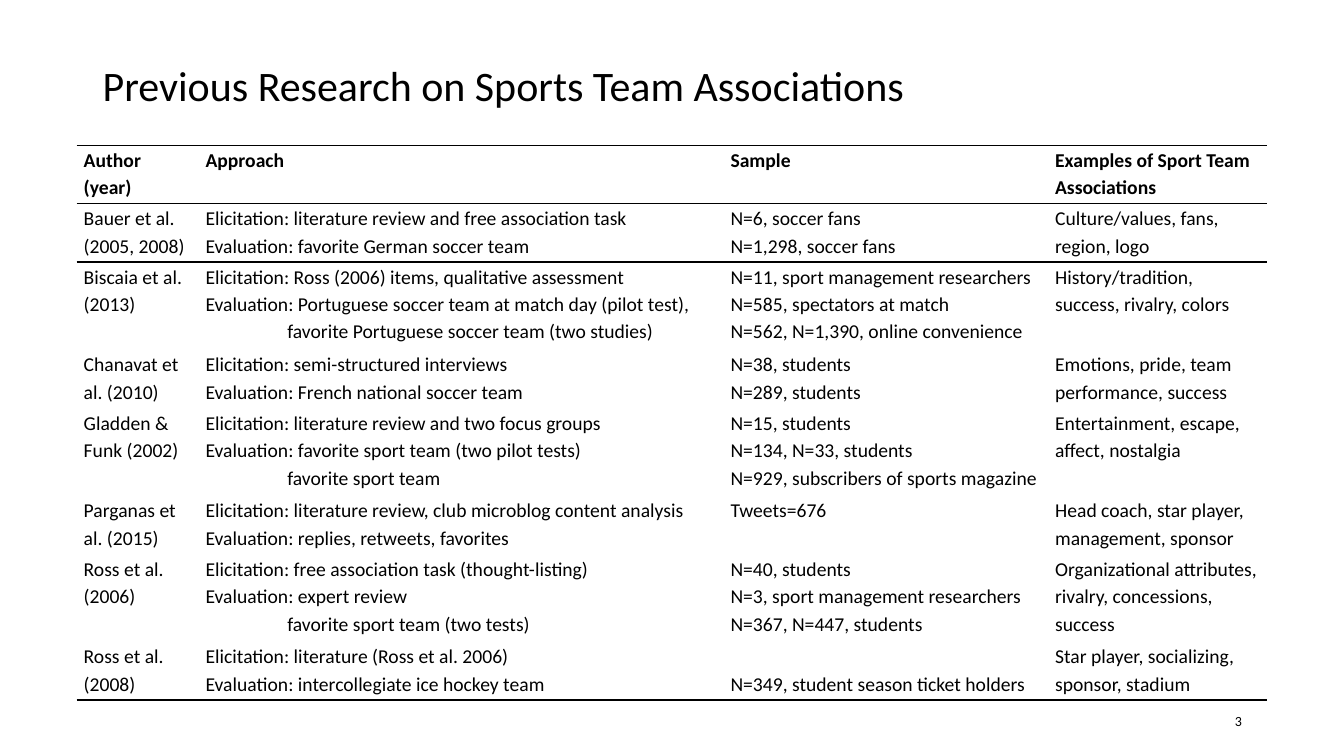
import pptx
import pptx.dml.color
import pptx.enum.text
import pptx.oxml
import pptx.oxml.ns
import pptx.util

Cm = pptx.util.Cm
Pt = pptx.util.Pt
ALIGN = pptx.enum.text.PP_ALIGN
ANCHOR = pptx.enum.text.MSO_ANCHOR

BLACK = pptx.dml.color.RGBColor(0x00, 0x00, 0x00)
PLAIN_TABLE_STYLE = "{2D5ABB26-0587-4C30-8999-92F81FD0307C}"

HEADINGS = [["Author (year)"], ["Approach"], ["Sample"],
            ["Examples of Sport Team Associations"]]
STUDIES = [
    [["Bauer et al. (2005, 2008)"],
     ["Elicitation: literature review and free association task",
      "Evaluation: favorite German soccer team"],
     ["N=6, soccer fans", "N=1,298, soccer fans"],
     ["Culture/values, fans, region, logo"]],
    [["Biscaia et al. (2013)"],
     ["Elicitation: Ross (2006) items, qualitative assessment",
      "Evaluation: Portuguese soccer team at match day (pilot test),",
      "favorite Portuguese soccer team (two studies)"],
     ["N=11, sport management researchers", "N=585, spectators at match",
      "N=562, N=1,390, online convenience"],
     ["History/tradition, success, rivalry, colors"]],
    [["Chanavat et al. (2010)"],
     ["Elicitation: semi-structured interviews",
      "Evaluation: French national soccer team"],
     ["N=38, students", "N=289, students"],
     ["Emotions, pride, team performance, success"]],
    [["Gladden & Funk (2002)"],
     ["Elicitation: literature review and two focus groups",
      "Evaluation: favorite sport team (two pilot tests)",
      "favorite sport team"],
     ["N=15, students", "N=134, N=33, students",
      "N=929, subscribers of sports magazine"],
     ["Entertainment, escape, affect, nostalgia"]],
    [["Parganas et al. (2015)"],
     ["Elicitation: literature review, club microblog content analysis",
      "Evaluation: replies, retweets, favorites"],
     ["Tweets=676"],
     ["Head coach, star player, management, sponsor"]],
    [["Ross et al. (2006)"],
     ["Elicitation: free association task (thought-listing)",
      "Evaluation: expert review",
      "favorite sport team (two tests)"],
     ["N=40, students", "N=3, sport management researchers",
      "N=367, N=447, students"],
     ["Organizational attributes, rivalry, concessions, success"]],
    [["Ross et al. (2008)"],
     ["Elicitation: literature (Ross et al. 2006)",
      "Evaluation: intercollegiate ice hockey team"],
     ["N=349, student season ticket holders"],
     ["Star player, socializing, sponsor, stadium"]],
]
APPROACH, SAMPLE = 1, 2
COLUMN_WIDTHS = [3.07, 13.23, 8.18, 5.51]
ROW_HEIGHTS = {2: 1.47, 3: 2.21}  # by number of text lines


class SlideBuilder:
    """Holds the text style and the current slide."""

    def __init__(self, page, font="Calibri", color=BLACK):
        self.page = page
        self.font = font
        self.color = color

    def add_span(self, para, text, size, bold=False):
        span = para.add_run()
        span.text = text
        span.font.name = self.font
        span.font.size = Pt(size)
        span.font.bold = bold
        span.font.color.rgb = self.color

    def add_text(self, text, left, top, width, height, size,
                 anchor=ANCHOR.MIDDLE, align=ALIGN.LEFT, spacing=1.0):
        box = self.page.shapes.add_textbox(Cm(left), Cm(top), Cm(width), Cm(height))
        frame = box.text_frame
        frame.word_wrap = True
        frame.vertical_anchor = anchor
        para = frame.paragraphs[0]
        para.alignment = align
        para.line_spacing = spacing
        self.add_span(para, text, size)

    def add_border(self, cell, side):
        line = pptx.oxml.parse_xml(
            f'<a:{side} {pptx.oxml.ns.nsdecls("a")} w="{Pt(1)}">'
            f'<a:solidFill><a:srgbClr val="{self.color}"/></a:solidFill></a:{side}>')
        cell._tc.get_or_add_tcPr().append(line)

    def fill_cell(self, cell, lines, bold=False, hanging=False):
        cell.margin_left = cell.margin_right = Cm(0.18)
        cell.margin_top = cell.margin_bottom = 0
        for index, text in enumerate(lines):
            frame = cell.text_frame
            para = frame.add_paragraph() if index else frame.paragraphs[0]
            para.line_spacing = 1.15
            # A third approach line continues the evaluation
            if hanging and index == 2:
                para._p.get_or_add_pPr().set("indent", str(Cm(2.06)))
            self.add_span(para, text, 14, bold)

    def add_table(self, rows, left, top):
        heights = [ROW_HEIGHTS[max(2, len(row[APPROACH]))] for row in rows]
        table = self.page.shapes.add_table(
            len(rows), len(COLUMN_WIDTHS), Cm(left), Cm(top),
            Cm(sum(COLUMN_WIDTHS)), Cm(sum(heights))).table
        table.horz_banding = False
        style = table._tbl.tblPr.find(pptx.oxml.ns.qn("a:tableStyleId"))
        style.text = PLAIN_TABLE_STYLE
        for column, width in zip(table.columns, COLUMN_WIDTHS):
            column.width = Cm(width)
        for row_index, row in enumerate(rows):
            table.rows[row_index].height = Cm(heights[row_index])
            for column_index, lines in enumerate(row):
                cell = table.cell(row_index, column_index)
                self.fill_cell(cell, lines, bold=row_index == 0,
                               hanging=column_index == APPROACH)
                if row_index in (0, 1):
                    self.add_border(cell, "lnT")
                if row_index in (0, len(rows) - 1):
                    self.add_border(cell, "lnB")
                cell.fill.background()
        return table


def main():
    deck = pptx.Presentation()
    deck.slide_width, deck.slide_height = Cm(33.87), Cm(19.05)
    builder = SlideBuilder(deck.slides.add_slide(deck.slide_layouts[6]))

    # Title
    builder.add_text("Previous Research on Sports Team Associations",
                     2.34, 1.57, 29.21, 1.35, 30, anchor=ANCHOR.BOTTOM, spacing=0.9)

    # Page number
    builder.add_text("3", 23.93, 17.65, 7.62, 1.02, 10, align=ALIGN.RIGHT)

    # Overview of studies
    table = builder.add_table([HEADINGS] + STUDIES, 1.93, 3.66)
    # The last sample belongs to the evaluation, on the second line
    table.cell(len(STUDIES), SAMPLE).margin_top = Cm(0.69)

    deck.save("out.pptx")


if __name__ == "__main__":
    main()
